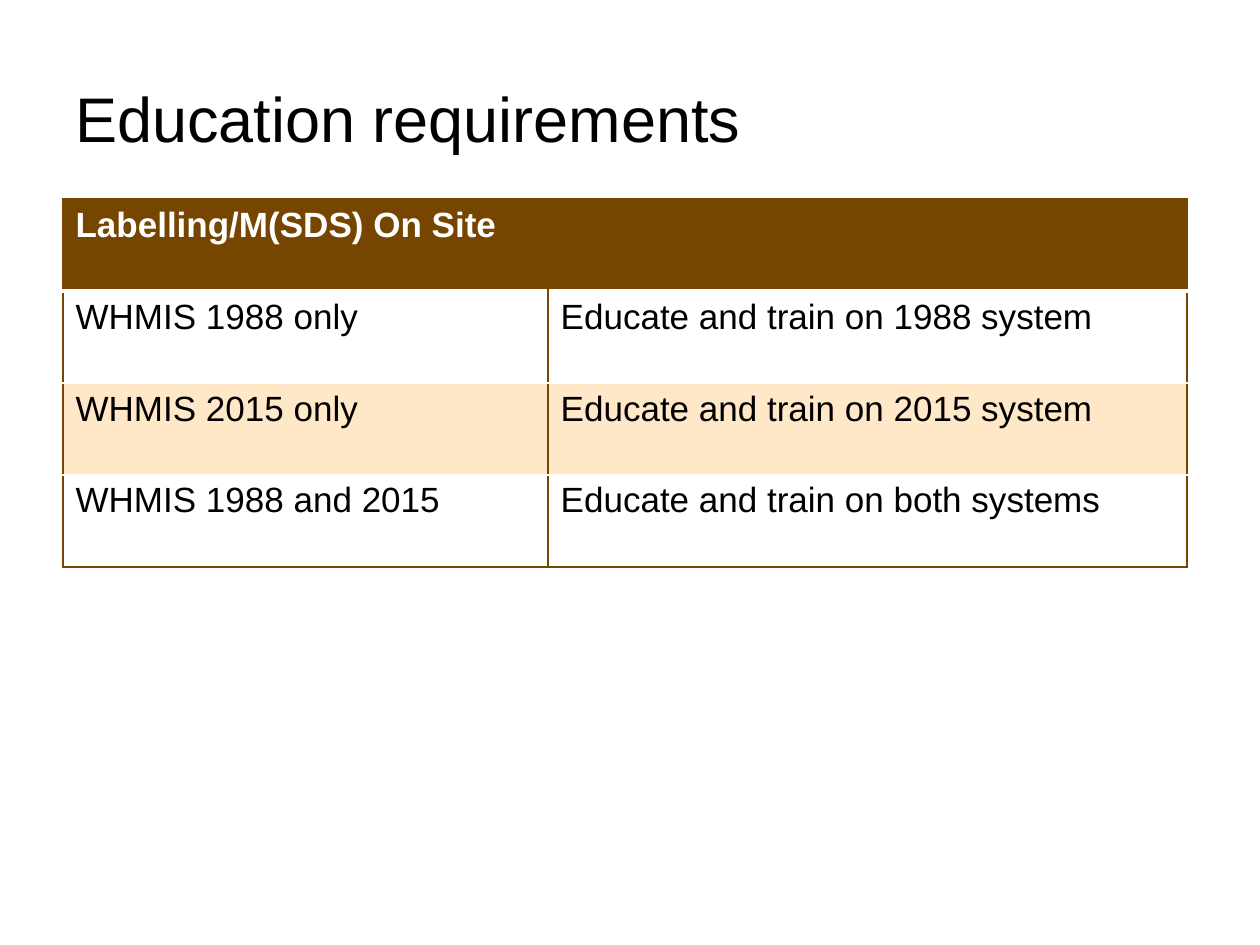
from pptx import Presentation
from pptx import util as u
from pptx.dml.color import RGBColor
from pptx.enum import text
from pptx.oxml import parse_xml
from pptx.oxml.ns import nsdecls

BROWN, CREAM, WHITE, BLACK = "764600", "FFE8C8", "FFFFFF", "000000"
HEADER = "Labelling/M(SDS) On Site"
ROWS = [
    ("WHMIS 1988 only", "Educate and train on 1988 system"),
    ("WHMIS 2015 only", "Educate and train on 2015 system"),
    ("WHMIS 1988 and 2015", "Educate and train on both systems"),
]
COL_WIDTHS = (3.85, 5.07)
ROW_HEIGHT = 0.73


def color(hex_string):
    return RGBColor.from_string(hex_string)


def write(tf, content, hex_string, size, bold=False):
    p = tf.paragraphs[0]
    p.alignment = text.PP_ALIGN.LEFT
    r = p.add_run()
    r.text = content
    for name, value in {"name": "Arial", "size": u.Pt(size), "bold": bold}.items():
        setattr(r.font, name, value)
    r.font.color.rgb = color(hex_string)


def add_title(slide, content):
    sp = slide.shapes.add_textbox(*map(u.Inches, (0.5, 0.58, 9.07, 1.12)))
    tf = sp.text_frame
    tf.word_wrap = True
    tf.vertical_anchor = text.MSO_ANCHOR.TOP
    write(tf, content, BLACK, 36)


def set_borders(cell, top, bottom, bottom_width=1):
    """Brown sides, with the given top and bottom line colours."""
    tc_pr = cell._tc.get_or_add_tcPr()
    edges = [("L", BROWN, 1), ("R", BROWN, 1), ("T", top, 1), ("B", bottom, bottom_width)]
    for i, (side, hex_string, width) in enumerate(edges):
        tc_pr.insert(i, parse_xml(
            f'<a:ln{side} {nsdecls("a")} w="{u.Pt(width)}"><a:solidFill>'
            f'<a:srgbClr val="{hex_string}"/></a:solidFill></a:ln{side}>'))


def fill_cell(cell, hex_string):
    cell.fill.solid()
    cell.fill.fore_color.rgb = color(hex_string)


def add_requirements_table(slide):
    n_rows = len(ROWS) + 1
    table = slide.shapes.add_table(
        n_rows, len(COL_WIDTHS), u.Inches(0.5), u.Inches(1.58),
        u.Inches(sum(COL_WIDTHS)), u.Inches(ROW_HEIGHT * n_rows)).table
    for column, width in zip(table.columns, COL_WIDTHS):
        column.width = u.Inches(width)
    for row in table.rows:
        row.height = u.Inches(ROW_HEIGHT)

    for cell in table.rows[0].cells:
        fill_cell(cell, BROWN)
        set_borders(cell, BROWN, WHITE, 3)
    header = table.cell(0, 0)
    header.merge(table.cell(0, len(COL_WIDTHS) - 1))
    write(header.text_frame, HEADER, WHITE, 20, bold=True)

    for i, labels in enumerate(ROWS, 1):
        for j, label in enumerate(labels):
            cell = table.cell(i, j)
            fill_cell(cell, WHITE if i % 2 else CREAM)
            set_borders(cell, WHITE, BROWN if i == len(ROWS) else WHITE)
            write(cell.text_frame, label, BLACK, 20)


def main():
    prs = Presentation()
    prs.slide_width, prs.slide_height = u.Inches(10), u.Inches(7.5)
    slide = prs.slides.add_slide(prs.slide_layouts[6])
    add_title(slide, "Education requirements")
    add_requirements_table(slide)
    prs.save("out.pptx")


if __name__ == "__main__":
    main()
